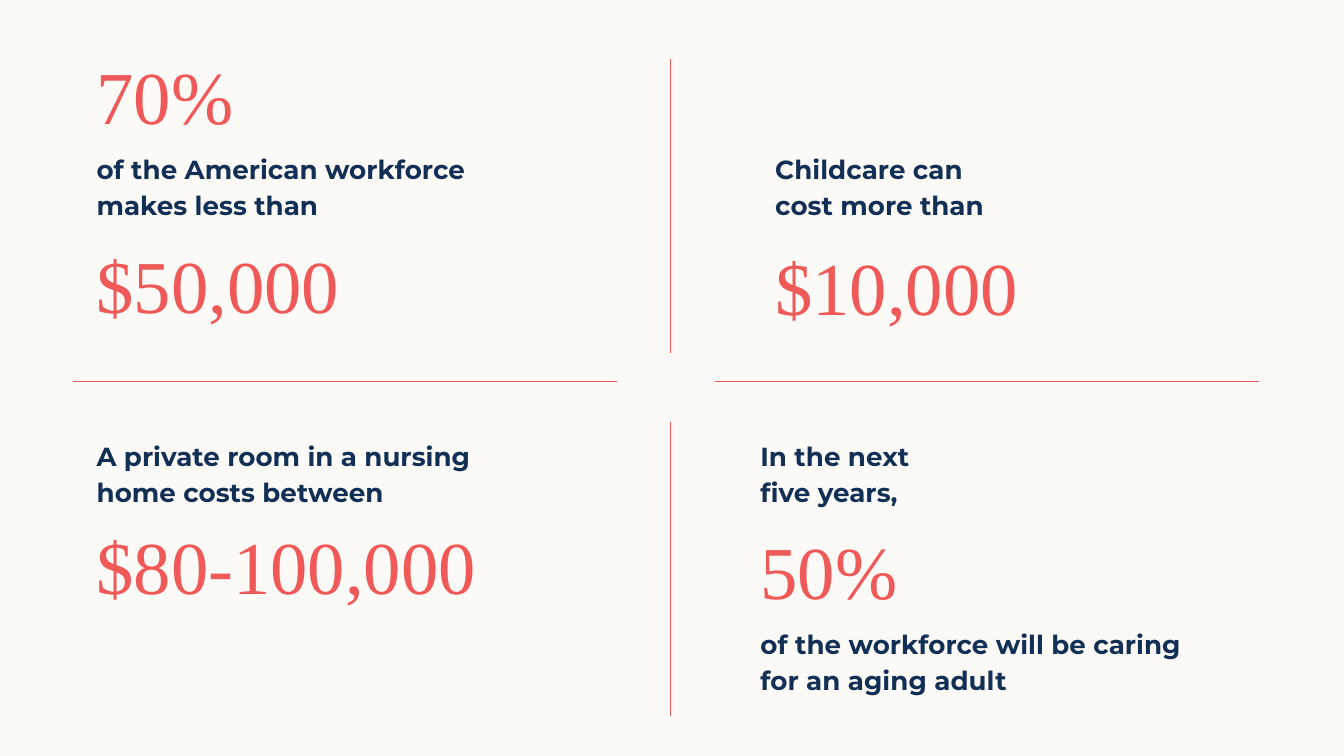
from pptx import Presentation
from pptx import util as u
from pptx.dml import color
from pptx.enum import shapes, text
from pptx.oxml import xmlchemy

CORAL = "EF5958"
NAVY = "122F56"
CREAM = "FCFAF6"


def paint(target, value):
    target.rgb = color.RGBColor.from_string(value)


class StatisticsSlide:
    """Slide with large coral figures, navy captions and thin dividers."""

    def __init__(self, presentation):
        self.slide = presentation.slides.add_slide(presentation.slide_layouts[6])
        fill = self.slide.background.fill
        fill.solid()
        paint(fill.fore_color, CREAM)

    def add_text(self, wording, box, font_name, size, value, bold, anchor, spacing):
        shape = self.slide.shapes.add_textbox(*map(u.Inches, box))
        frame = shape.text_frame
        frame.word_wrap = True
        frame.vertical_anchor = anchor
        frame.margin_left = frame.margin_right = u.Inches(0.1)
        frame.margin_top = frame.margin_bottom = u.Inches(0.1)
        frame.text = wording
        for paragraph in frame.paragraphs:
            paragraph.line_spacing = spacing
            for run in paragraph.runs:
                run.font.name = font_name
                run.font.size = u.Pt(size)
                run.font.bold = bold
                paint(run.font.color, value)

    def add_figure(self, wording, *box):
        self.add_text(wording, box, "Times New Roman", 40, CORAL, False,
                      text.MSO_ANCHOR.MIDDLE, 1.0)

    def add_caption(self, wording, left, top, width):
        self.add_text(wording, (left, top, width, 0.87), "Montserrat", 14, NAVY,
                      True, text.MSO_ANCHOR.TOP, 1.15)

    def add_divider(self, left, top, width, height):
        ends = (left, top, left + width, top + height)
        divider = self.slide.shapes.add_connector(
            shapes.MSO_CONNECTOR.STRAIGHT, *map(u.Inches, ends))
        paint(divider.line.color, CORAL)
        divider.line.width = u.Pt(0.75)
        divider._element.spPr.append(xmlchemy.OxmlElement("a:effectLst"))


def main():
    presentation = Presentation()
    presentation.slide_width = u.Inches(10)
    presentation.slide_height = presentation.slide_width * 9 // 16
    slide = StatisticsSlide(presentation)

    left, right_top, right_bottom = 0.62, 5.67, 5.56
    upper, lower = 1.01, 3.14

    slide.add_figure("70%", left, 0.32, 1.62, 0.77)
    slide.add_caption("of the American workforce makes less than", left, upper, 3.29)
    slide.add_figure("$50,000", left, 1.8, 2.66, 0.62)

    slide.add_caption("Childcare can \vcost more than", right_top, upper, 2.06)
    slide.add_figure("$10,000", right_top, 2, 2.66, 0.25)

    slide.add_caption("A private room in a nursing home costs between", left, lower, 3.12)
    slide.add_figure("$80-100,000", left, 3.68, 4.34, 1.05)

    slide.add_caption("In the next\nfive years,", right_bottom, lower, 1.96)
    slide.add_figure("50%", right_bottom, 3.85, 1.29, 0.77)
    slide.add_caption("of the workforce will be caring\nfor an aging adult",
                      right_bottom, 4.54, 4.61)

    for start in (0.54, 5.32):
        slide.add_divider(start, 2.84, 4.05, 0)
    for start in (0.44, 3.14):
        slide.add_divider(4.99, start, 0, 2.19)

    presentation.save("out.pptx")


if __name__ == "__main__":
    main()
